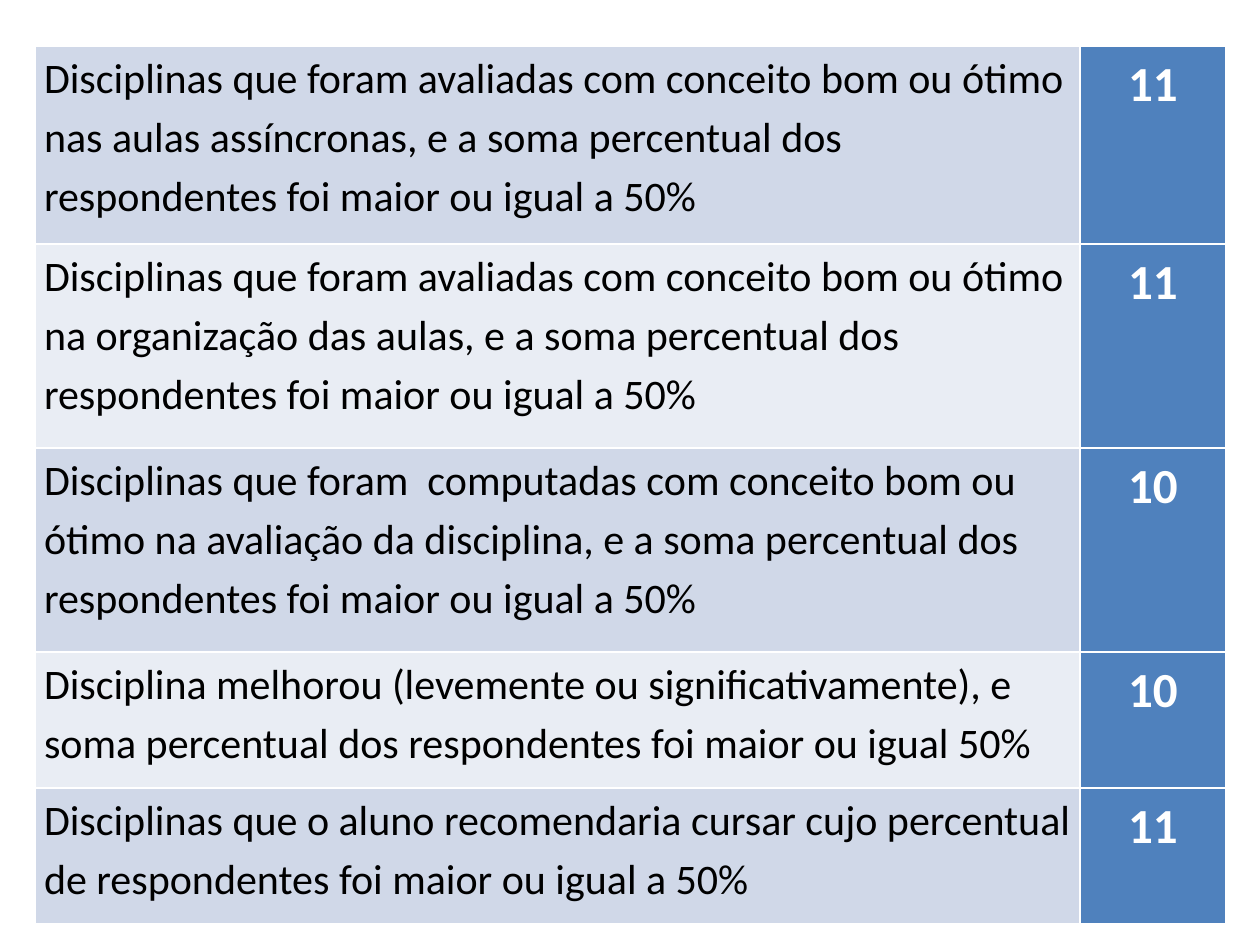
"""Build a slide with a table of course evaluation counts."""
from dataclasses import dataclass

from lxml.etree import SubElement
from pptx import Presentation
from pptx.dml.color import RGBColor
from pptx.enum.text import PP_ALIGN
from pptx.oxml.ns import qn
from pptx.table import _Cell
from pptx.util import Emu, Inches, Pt

SCALE = Inches(1) / 126
BLACK = RGBColor(0x00, 0x00, 0x00)
WHITE = RGBColor(0xFF, 0xFF, 0xFF)
BLUE = RGBColor(0x4F, 0x81, 0xBD)
BANDS = (RGBColor(0xD0, 0xD8, 0xE8), RGBColor(0xE9, 0xED, 0xF4))
LEFT, TOP = 35, 46
COLS = (1045, 146)
PAD = 9


@dataclass(frozen=True)
class Row:
    """A criterion, its count and its height in px."""
    text: str
    count: str
    height: int


@dataclass(frozen=True)
class Style:
    """The type of one column."""
    size: int
    color: RGBColor
    bold: bool
    align: PP_ALIGN


LABEL = Style(24, BLACK, False, PP_ALIGN.LEFT)
COUNT = Style(28, WHITE, True, PP_ALIGN.CENTER)
ROWS = (
    Row("Disciplinas que foram avaliadas com conceito bom ou ótimo nas aulas "
        "assíncronas, e a soma percentual dos respondentes foi maior ou igual a 50%",
        "11", 198),
    Row("Disciplinas que foram avaliadas com conceito bom ou ótimo na organização "
        "das aulas, e a soma percentual dos respondentes foi maior ou igual a 50%",
        "11", 204),
    Row("Disciplinas que foram  computadas com conceito bom ou ótimo na avaliação "
        "da disciplina, e a soma percentual dos respondentes foi maior ou igual a 50%",
        "10", 204),
    Row("Disciplina melhorou (levemente ou significativamente), e soma percentual "
        "dos respondentes foi maior ou igual 50%", "10", 136),
    Row("Disciplinas que o aluno recomendaria cursar cujo percentual de "
        "respondentes foi maior ou igual a 50%", "11", 136),
)


def px(count: int) -> Emu:
    """Turn px into EMU."""
    return Emu(round(count * SCALE))


def edge(cell: _Cell) -> None:
    """Give a cell thin white borders."""
    props = cell._tc.get_or_add_tcPr()
    for side in ("lnL", "lnR", "lnT", "lnB"):
        line = SubElement(props, qn(f"a:{side}"), w=str(Pt(1)))
        fill = SubElement(line, qn("a:solidFill"))
        SubElement(fill, qn("a:srgbClr"), val=str(WHITE))


def write(cell: _Cell, text: str, style: Style, back: RGBColor) -> None:
    """Fill a cell with colour and text."""
    cell.margin_left = cell.margin_right = px(PAD)
    cell.margin_top = cell.margin_bottom = 0
    edge(cell)
    cell.fill.solid()
    cell.fill.fore_color.rgb = back
    para = cell.text_frame.paragraphs[0]
    para.alignment = style.align
    para.line_spacing = 1.15
    run = para.add_run()
    run.text = text
    run.font.name = "Calibri"
    run.font.size = Pt(style.size)
    run.font.bold = style.bold
    run.font.color.rgb = style.color


def main() -> None:
    """Build and save the slide."""
    deck = Presentation()
    deck.slide_width, deck.slide_height = Inches(10), Inches(7.5)
    slide = deck.slides.add_slide(deck.slide_layouts[6])
    high = sum(row.height for row in ROWS)
    frame = slide.shapes.add_table(len(ROWS), len(COLS), px(LEFT), px(TOP),
                                   px(sum(COLS)), px(high))
    table = frame.table
    table.first_row = table.horz_banding = False
    for col, width in zip(table.columns, COLS):
        col.width = px(width)
    for index, row in enumerate(ROWS):
        table.rows[index].height = px(row.height)
        write(table.cell(index, 0), row.text, LABEL, BANDS[index % 2])
        write(table.cell(index, 1), row.count, COUNT, BLUE)
    deck.save("out.pptx")


if __name__ == "__main__":
    main()
